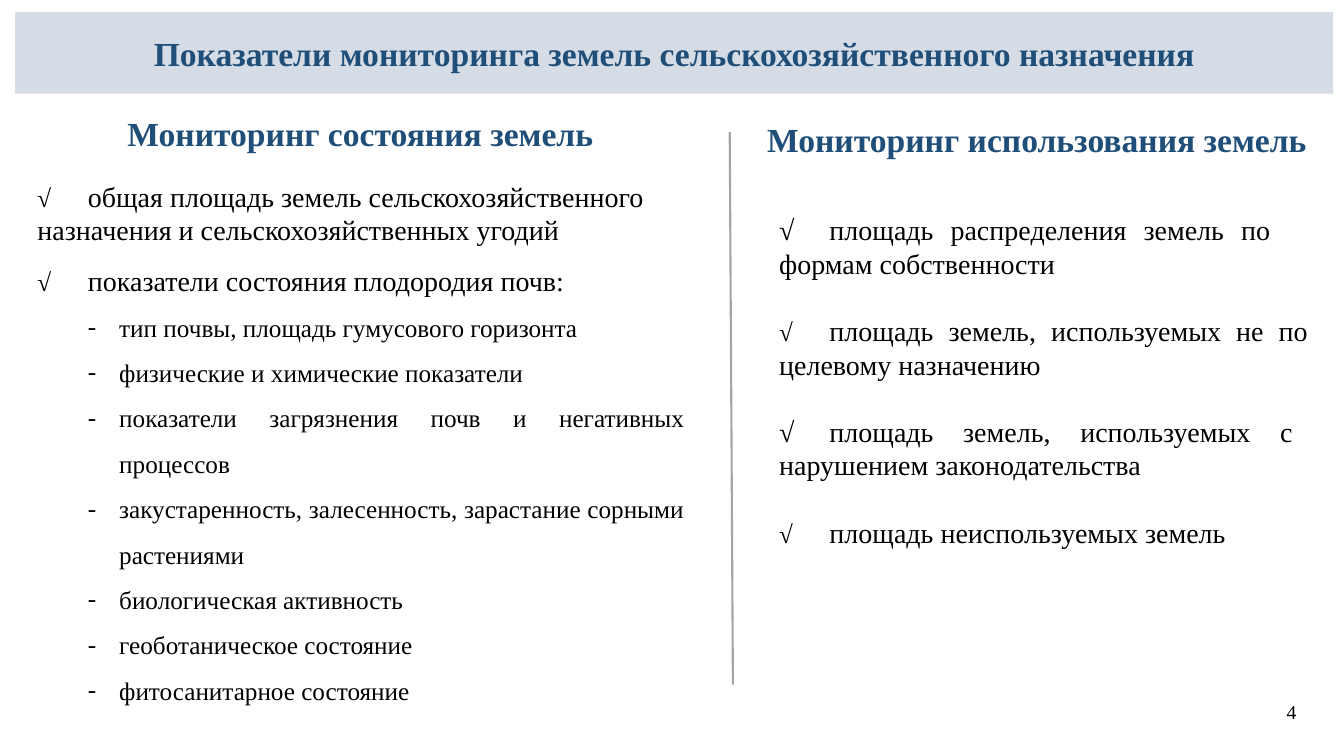
from lxml.etree import SubElement
from pptx import Presentation
from pptx.dml.color import RGBColor
from pptx.enum.shapes import MSO_CONNECTOR as Link
from pptx.enum.text import MSO_ANCHOR as Anchor, MSO_AUTO_SIZE as Fit, PP_ALIGN as Align
from pptx.oxml.ns import qn
from pptx.util import Cm, Pt

FONT = "Times New Roman"
NAVY, BLACK, BAND, GREY = "1F4E79", "000000", "D6DCE5", "A5A5A5"

STATE_POINTS = [
    (18, "общая площадь земель сельскохозяйственного \tназначения и сельскохозяйственных угодий"),
    (18, "показатели состояния плодородия почв:"),
]
SOIL_INDICATORS = [
    "тип почвы, площадь гумусового горизонта",
    "физические и химические показатели",
    "показатели загрязнения почв и негативных процессов",
    "закустаренность, залесенность, зарастание сорными растениями",
    "биологическая активность",
    "геоботаническое состояние",
    "фитосанитарное состояние",
]
USE_POINTS = [
    (20, "площадь распределения земель по \tформам собственности"),
    (18, "площадь земель, используемых не по \tцелевому назначению"),
    (20, "площадь земель, используемых с \tнарушением законодательства"),
    (18, "площадь неиспользуемых земель"),
]


def colour(value):
    return RGBColor.from_string(value)


def place(holder, left, top, width, height, anchor):
    holder.left, holder.top = Cm(left), Cm(top)
    holder.width, holder.height = Cm(width), Cm(height)
    frame = holder.text_frame
    frame.word_wrap = True
    frame.auto_size = Fit.NONE
    frame.vertical_anchor = anchor
    return frame


def add_run(paragraph, text, size, tint=BLACK, bold=False):
    run = paragraph.add_run()
    run.text = text
    run.font.name = FONT
    run.font.size = Pt(size)
    run.font.bold = bold
    run.font.color.rgb = colour(tint)


def next_paragraph(frame, align, gap=0, spacing=1.0):
    first = frame.paragraphs[0]
    paragraph = frame.add_paragraph() if first.runs else first
    paragraph.alignment = align
    paragraph.space_before = Pt(gap)
    paragraph.space_after = Pt(0)
    paragraph.line_spacing = spacing
    return paragraph


def set_bullet(paragraph, margin=0, indent=0, mark=None):
    props = paragraph._p.get_or_add_pPr()
    props.set("marL", str(Cm(margin)))
    props.set("indent", str(Cm(indent)))
    if mark:
        SubElement(props, qn("a:buFont")).set("typeface", FONT)
        SubElement(props, qn("a:buChar")).set("char", mark)
    else:
        SubElement(props, qn("a:buNone"))


def add_heading(holder, text, *box):
    heading = next_paragraph(place(holder, *box, Anchor.MIDDLE), Align.CENTER)
    set_bullet(heading)
    add_run(heading, text, 24, NAVY, True)


def add_checks(frame, points, gap):
    for number, (mark_size, text) in enumerate(points):
        check = next_paragraph(frame, Align.JUSTIFY, gap if number else 0)
        set_bullet(check)
        add_run(check, "√\t", mark_size, bold=True)
        add_run(check, text, 20)


def add_dashes(frame, texts):
    for text in texts:
        dash = next_paragraph(frame, Align.JUSTIFY, spacing=1.5)
        dash.level = 1
        set_bullet(dash, 2.06, -0.79, "-")
        add_run(dash, text, 18)


def add_divider(slide, x1, y1, x2, y2):
    divider = slide.shapes.add_connector(Link.STRAIGHT, Cm(x1), Cm(y1), Cm(x2), Cm(y2))
    divider.line.color.rgb = colour(GREY)
    divider.line.width = Pt(1.5)
    SubElement(divider._element.spPr, qn("a:effectLst"))


def add_page_number(slide, text, *box):
    holder = slide.shapes.add_textbox(0, 0, 0, 0)
    number = next_paragraph(place(holder, *box, Anchor.MIDDLE), Align.RIGHT)
    add_run(number, text, 14)


def main():
    deck = Presentation()
    deck.slide_width, deck.slide_height = Cm(33.87), Cm(19.05)
    slide = deck.slides.add_slide(deck.slide_layouts.get_by_name("Comparison"))
    title, state_head, state_list, use_head, use_list = slide.placeholders

    title.fill.solid()
    title.fill.fore_color.rgb = colour(BAND)
    add_heading(title, "Показатели мониторинга земель сельскохозяйственного назначения",
                0.38, 0.3, 33.22, 2.06)
    add_heading(state_head, "Мониторинг состояния земель", 2.26, 2.72, 13.64, 1.27)
    add_heading(use_head, "Мониторинг использования земель", 19.02, 2.87, 14.22, 1.27)

    state_frame = place(state_list, 0.69, 4.39, 16.81, 14.07, Anchor.TOP)
    add_checks(state_frame, STATE_POINTS, 12)
    add_dashes(state_frame, SOIL_INDICATORS)
    add_checks(place(use_list, 19.38, 5.23, 14.22, 8.81, Anchor.TOP), USE_POINTS, 24)

    add_divider(slide, 18.39, 3.33, 18.47, 17.25)
    add_page_number(slide, "4", 31.37, 17.42, 1.55, 1.02)
    deck.save("out.pptx")


if __name__ == "__main__":
    main()
